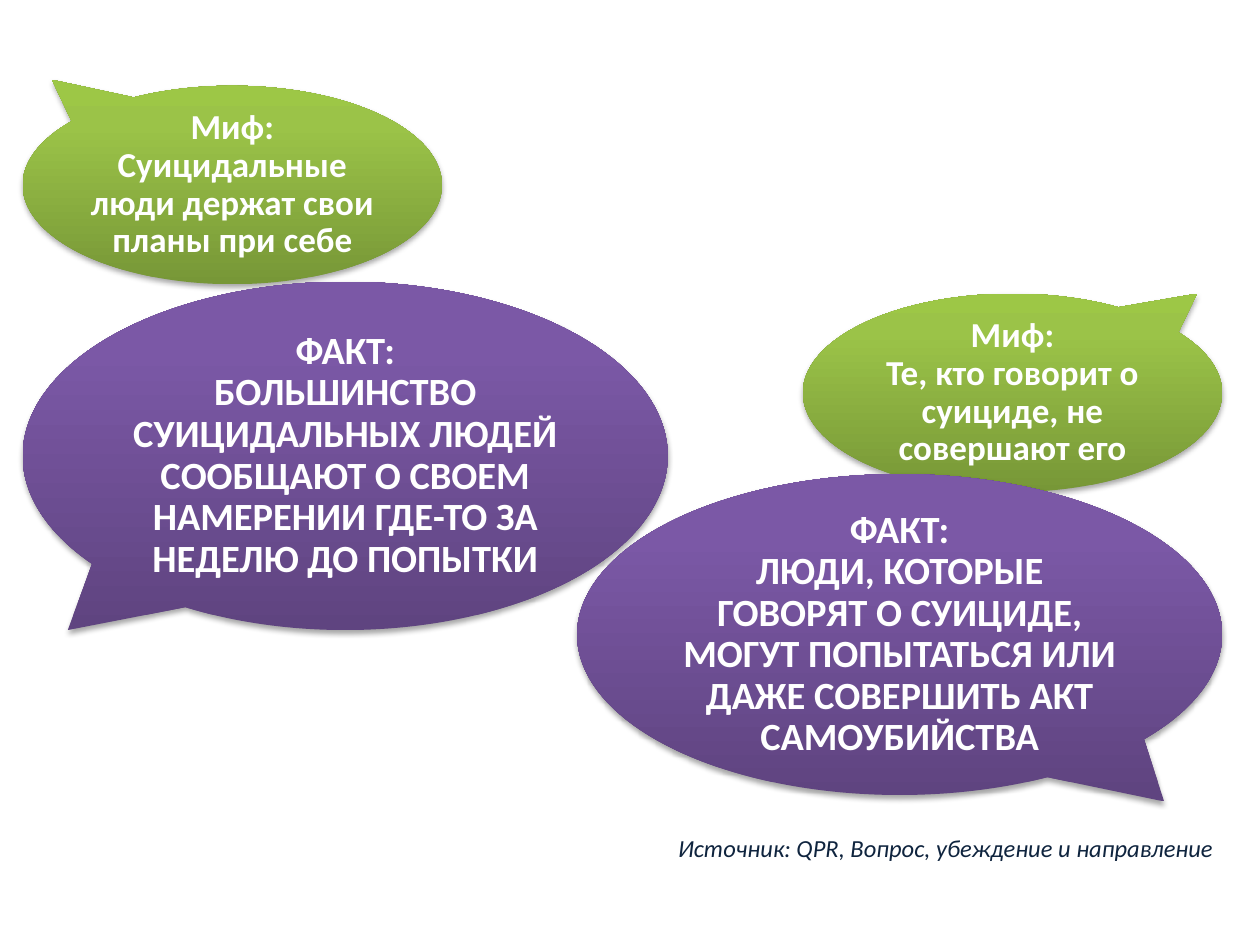
import pptx
import pptx.dml.color
import pptx.enum.shapes
import pptx.enum.text
import pptx.util
from lxml import etree

ALIGN = pptx.enum.text.PP_ALIGN
ANCHOR = pptx.enum.text.MSO_ANCHOR
SLIDE_WIDTH = pptx.util.Inches(10)
SLIDE_HEIGHT = pptx.util.Inches(7.5)
DRAWING_NS = "http://schemas.openxmlformats.org/drawingml/2006/main"
GREEN = ((0, "779737"), (80, "9BC348"), (100, "9DC746"))
PURPLE = ((0, "5F4480"), (80, "7B58A6"), (100, "7C57A8"))
# Shares of the box that holds a myth and its fact
MYTH_WIDTH = 0.65
FACT_HEIGHT = 0.64
MYTH_HEIGHT = 0.21  # share of the slide


def color(value):
    return pptx.dml.color.RGBColor.from_string(value)


def slide_box(left, top, width, height):
    """Turn percentages of the slide into lengths."""
    return (int(SLIDE_WIDTH * left / 100), int(SLIDE_HEIGHT * top / 100),
            int(SLIDE_WIDTH * width / 100), int(SLIDE_HEIGHT * height / 100))


def write(frame, lines, size, fill, align, bold=False, italic=False, spacing=1.0):
    frame.word_wrap = True
    for index, line in enumerate(lines):
        para = frame.add_paragraph() if index else frame.paragraphs[0]
        para.alignment = align
        para.line_spacing = spacing
        span = para.add_run()
        span.text = line
        span.font.name = "Calibri"
        span.font.size = pptx.util.Pt(size)
        span.font.bold = bold
        span.font.italic = italic
        span.font.color.rgb = color(fill)


def shade(shape, stops):
    """Give the shape an upward gradient and a soft shadow below."""
    shape.line.fill.background()
    shape.fill.background()
    properties = shape.fill._xPr
    stop_xml = "".join(
        f'<a:gs pos="{place * 1000}"><a:srgbClr val="{value}"/></a:gs>'
        for place, value in stops)
    gradient = etree.fromstring(
        f'<a:gradFill xmlns:a="{DRAWING_NS}" rotWithShape="1">'
        f'<a:gsLst>{stop_xml}</a:gsLst><a:lin ang="16200000" scaled="0"/></a:gradFill>')
    properties.replace(properties.find(f"{{{DRAWING_NS}}}noFill"), gradient)
    properties.append(etree.fromstring(
        f'<a:effectLst xmlns:a="{DRAWING_NS}">'
        '<a:outerShdw blurRad="40000" dist="23000" dir="5400000" rotWithShape="0">'
        '<a:srgbClr val="000000"><a:alpha val="35000"/></a:srgbClr>'
        '</a:outerShdw></a:effectLst>'))


def add_bubble(page, box, tail, stops, lines, size):
    bubble = page.shapes.add_shape(
        pptx.enum.shapes.MSO_SHAPE.OVAL_CALLOUT, *box)
    bubble.adjustments[0], bubble.adjustments[1] = tail
    shade(bubble, stops)
    frame = bubble.text_frame
    frame.margin_left = frame.margin_right = pptx.util.Inches(0.05)
    frame.margin_top = frame.margin_bottom = pptx.util.Inches(0.05)
    frame.vertical_anchor = ANCHOR.MIDDLE
    write(frame, lines, size, "FFFFFF", ALIGN.CENTER, bold=True, spacing=0.9)


def add_myth_and_fact(page, box, myth, fact, myth_tail, fact_tail, on_right=False):
    """Put the myth at the top of the box, on one side, and the fact at its foot."""
    left, top, width, height = box
    myth_width = int(width * MYTH_WIDTH)
    myth_left = left + width - myth_width if on_right else left
    fact_height = int(height * FACT_HEIGHT)
    add_bubble(page, (myth_left, top, myth_width, int(SLIDE_HEIGHT * MYTH_HEIGHT)),
               myth_tail, GREEN, ("Миф:", myth), 20)
    add_bubble(page, (left, top + height - fact_height, width, fact_height),
               fact_tail, PURPLE, ("ФАКТ:", fact), 22)


def add_source_line(page, box):
    frame = page.shapes.add_textbox(*box).text_frame
    write(frame, ["Источник: QPR, Вопрос, убеждение и направление"], 14,
          "0F243E", ALIGN.RIGHT, italic=True)


def main():
    deck = pptx.Presentation()
    deck.slide_width, deck.slide_height = SLIDE_WIDTH, SLIDE_HEIGHT
    page = deck.slides.add_slide(deck.slide_layouts[6])
    add_myth_and_fact(
        page, slide_box(1.8, 9.07, 51.2, 57.6),
        "Суицидальные люди держат свои планы при себе",
        "БОЛЬШИНСТВО СУИЦИДАЛЬНЫХ ЛЮДЕЙ СООБЩАЮТ О СВОЕМ НАМЕРЕНИИ "
        "ГДЕ-ТО ЗА НЕДЕЛЮ ДО ПОПЫТКИ",
        (-0.43, -0.53), (-0.43, 0.5))
    add_myth_and_fact(
        page, slide_box(45.8, 31.07, 51.2, 53.07),
        "Те, кто говорит о суициде, не совершают его",
        "ЛЮДИ, КОТОРЫЕ ГОВОРЯТ О СУИЦИДЕ, МОГУТ ПОПЫТАТЬСЯ ИЛИ ДАЖЕ "
        "СОВЕРШИТЬ АКТ САМОУБИЙСТВА",
        (0.44, -0.5), (0.41, 0.52), on_right=True)
    add_source_line(page, slide_box(2.8, 87.47, 94.5, 4.53))
    deck.save("out.pptx")


if __name__ == "__main__":
    main()
